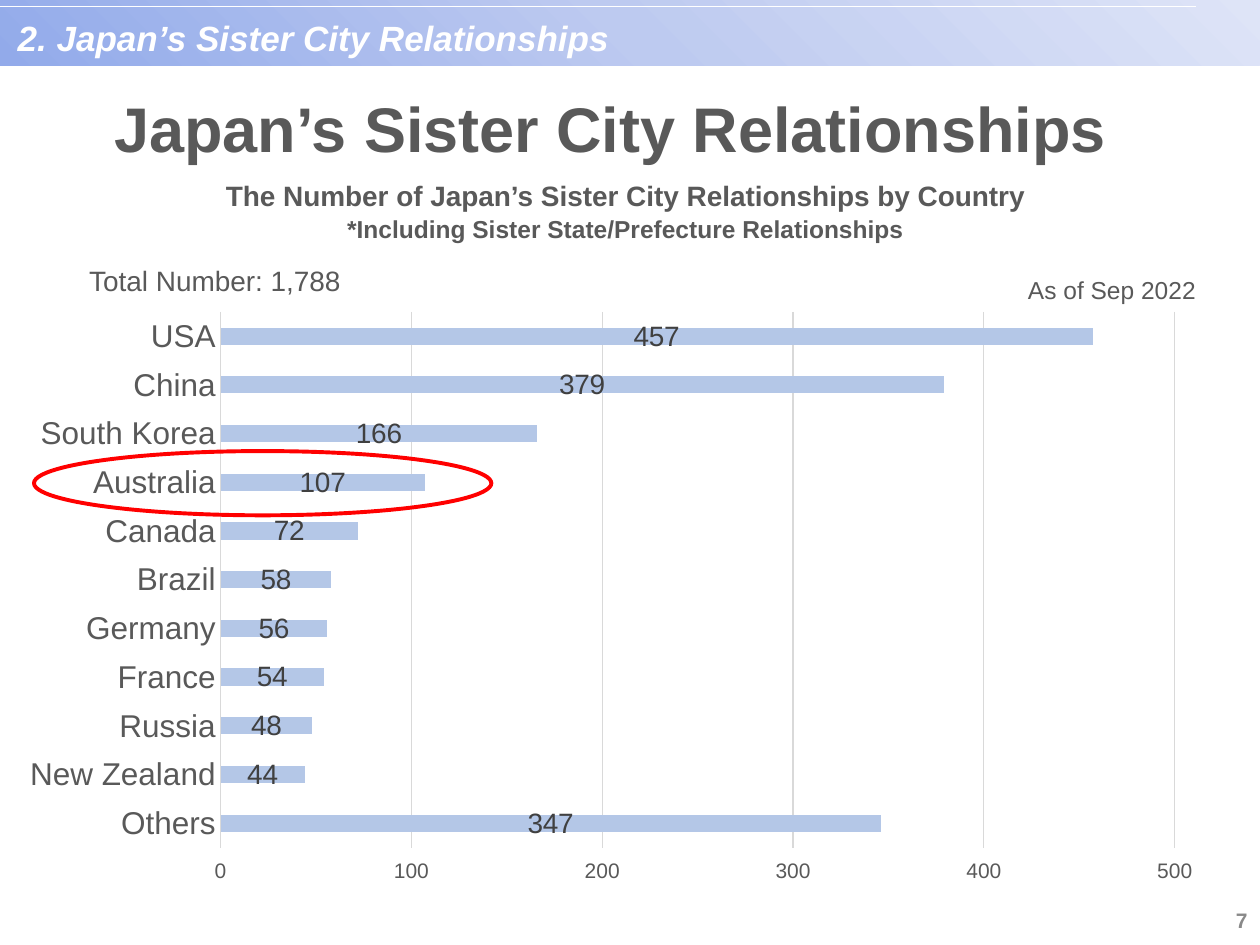
from lxml import etree
from pptx import Presentation
from pptx.chart.data import CategoryChartData
from pptx.dml.color import RGBColor
from pptx.enum.chart import (XL_CHART_TYPE, XL_LABEL_POSITION, XL_TICK_LABEL_POSITION,
                             XL_TICK_MARK)
from pptx.enum.shapes import MSO_CONNECTOR, MSO_SHAPE
from pptx.enum.text import MSO_ANCHOR, PP_ALIGN
from pptx.oxml import parse_xml
from pptx.oxml.ns import nsdecls, qn
from pptx.util import Inches, Pt

# Content
CITIES = [
    ("USA", 457), ("China", 379), ("South Korea", 166), ("Australia", 107),
    ("Canada", 72), ("Brazil", 58), ("Germany", 56), ("France", 54),
    ("Russia", 48), ("New Zealand", 44), ("Others", 346),
]
LABELS = {10: "347"}  # label that differs from its bar

# Each line: text, size key, colour key, bold, italic
TEXTS = [
    dict(at=(7.75, 7.1, 2.25, 0.4), align=PP_ALIGN.RIGHT, mid=True,
         lines=[("7", "small", "page", True, False)]),
    dict(at=(0.31, 0.69, 9.07, 0.71), align=PP_ALIGN.CENTER, mid=True, gap=0.9,
         lines=[("Japan’s Sister City Relationships", "title", "text", True, False)]),
    dict(at=(7.63, 2.13, 2.09, 0.32), indent=0.43,
         lines=[("As of Sep 2022", "note", "text", False, False)]),
    dict(at=(0.42, 1.4, 9.09, 0.61), align=PP_ALIGN.CENTER, gap=0.9,
         lines=[("The Number of Japan’s Sister City Relationships by Country",
                 "body", "text", True, False),
                ("*Including Sister State/Prefecture Relationships",
                 "note", "text", True, False)]),
    dict(at=(0.61, 2.07, 2.44, 0.32), gap=0.9,
         lines=[("Total Number: 1,788", "body", "text", False, False)]),
]
HEADER = dict(at=(0.14, 0.13, 5.49, 0.34), flush=True,
              lines=[("2. Japan’s Sister City Relationships", "head", "white", True, True)])

THEME = dict(
    font="Arial",
    size=dict(title=36, head=20, axis=18, body=16, note=14, small=12),
    color=dict(text="595959", page="898989", white="FFFFFF", grid="D9D9D9",
               bar="B4C7E7", label="404040", ring="FF0000"),
    band=[(0, "92AAEA"), (50, "BDCAF0"), (100, "DEE4F7")],
)


def color(key):
    return RGBColor.from_string(THEME["color"][key])


def style(font, size, tint, bold=False, italic=False):
    font.name = THEME["font"]
    font.size = Pt(THEME["size"][size])
    font.color.rgb = color(tint)
    font.bold, font.italic = bold, italic


def box(at):
    return [Inches(n) for n in at]


def add_text(slide, at, lines, align=PP_ALIGN.LEFT, mid=False, gap=None,
             indent=0, flush=False):
    frame = slide.shapes.add_textbox(*box(at)).text_frame
    frame.word_wrap = True
    frame.vertical_anchor = MSO_ANCHOR.MIDDLE if mid else MSO_ANCHOR.TOP
    if flush:
        frame.margin_left = frame.margin_right = 0
        frame.margin_top = frame.margin_bottom = 0
    for i, (words, *look) in enumerate(lines):
        para = frame.add_paragraph() if i else frame.paragraphs[0]
        para.alignment = align
        if gap:
            para.line_spacing = gap
        if i:
            para.space_before = Pt(2.8)
        if indent:
            para._p.get_or_add_pPr().set("marL", str(Inches(indent)))
        run = para.add_run()
        run.text = words
        style(run.font, *look)


def add_band(slide):
    band = slide.shapes.add_shape(MSO_SHAPE.RECTANGLE, *box((0, 0, 10, 0.52)))
    band.shadow.inherit = False
    band.line.fill.background()
    band.fill.background()
    stops = "".join(f'<a:gs pos="{pos * 1000}"><a:srgbClr val="{tint}"/></a:gs>'
                    for pos, tint in THEME["band"])
    blend = parse_xml(
        f'<a:gradFill {nsdecls("a")} rotWithShape="1"><a:gsLst>{stops}</a:gsLst>'
        '<a:path path="circle"><a:fillToRect t="100000" r="100000"/></a:path></a:gradFill>')
    props = band._element.spPr
    props.replace(props.find(qn("a:noFill")), blend)

    rule = slide.shapes.add_connector(MSO_CONNECTOR.STRAIGHT, *box((0, 0.05, 9.49, 0.05)))
    rule.line.color.rgb = color("white")
    rule.line.width = Pt(0.75)
    etree.SubElement(rule._element.spPr, qn("a:effectLst"))


def add_bars(slide):
    data = CategoryChartData()
    data.categories = [name for name, _ in CITIES]
    data.add_series("Series 1", [count for _, count in CITIES])
    chart = slide.shapes.add_chart(XL_CHART_TYPE.BAR_CLUSTERED,
                                   *box((0.04, 2.39, 9.61, 4.72)), data).chart
    chart.has_legend = chart.has_title = False
    chart.font.name = THEME["font"]

    # Axes: first category on top, so the high side of the scale is the bottom
    cat, val = chart.category_axis, chart.value_axis
    cat.reverse_order = True
    val.tick_label_position = XL_TICK_LABEL_POSITION.HIGH
    val.minimum_scale, val.maximum_scale, val.major_unit = 0, 500, 100
    for axis, size in ((cat, "axis"), (val, "small")):
        axis.major_tick_mark = axis.minor_tick_mark = XL_TICK_MARK.NONE
        style(axis.tick_labels.font, size, "text")
    val.format.line.fill.background()
    val.has_major_gridlines = True
    for line in (cat.format.line, val.major_gridlines.format.line):
        line.color.rgb = color("grid")
        line.width = Pt(0.75)

    # Bars and labels
    plot = chart.plots[0]
    plot.gap_width, plot.vary_by_categories = 182, False
    bars = plot.series[0]
    bars.invert_if_negative = False
    bars.format.fill.solid()
    bars.format.fill.fore_color.rgb = color("bar")
    marks = bars.data_labels
    marks.show_value = True
    marks.position = XL_LABEL_POSITION.CENTER
    style(marks.font, "body", "label")
    for i, words in LABELS.items():
        mark = bars.points[i].data_label
        run = mark.text_frame.paragraphs[0].add_run()
        run.text = words
        style(run.font, "body", "label")
        mark.position = XL_LABEL_POSITION.CENTER

    # Fixed plot area
    area = chart._chartSpace.chart.plotArea
    for old in area.findall(qn("c:layout")):
        area.remove(old)
    spots = "".join(f'<c:{key} val="{n}"/>' for key, n in
                    (("x", 0.178), ("y", 0.018), ("w", 0.788), ("h", 0.901)))
    area.insert(0, parse_xml(
        f'<c:layout {nsdecls("c")}><c:manualLayout><c:layoutTarget val="inner"/>'
        f'<c:xMode val="edge"/><c:yMode val="edge"/>{spots}</c:manualLayout></c:layout>'))


def add_ring(slide):
    ring = slide.shapes.add_shape(MSO_SHAPE.OVAL, *box((0.27, 3.58, 3.63, 0.51)))
    ring.shadow.inherit = False
    ring.fill.background()
    ring.line.color.rgb = color("ring")
    ring.line.width = Pt(2.25)


def main():
    deck = Presentation()
    deck.slide_width, deck.slide_height = Inches(10), Inches(7.5)
    slide = deck.slides.add_slide(deck.slide_layouts[6])
    add_band(slide)
    for item in TEXTS:
        add_text(slide, **item)
    add_bars(slide)
    add_ring(slide)
    add_text(slide, **HEADER)
    deck.save("out.pptx")


if __name__ == "__main__":
    main()
